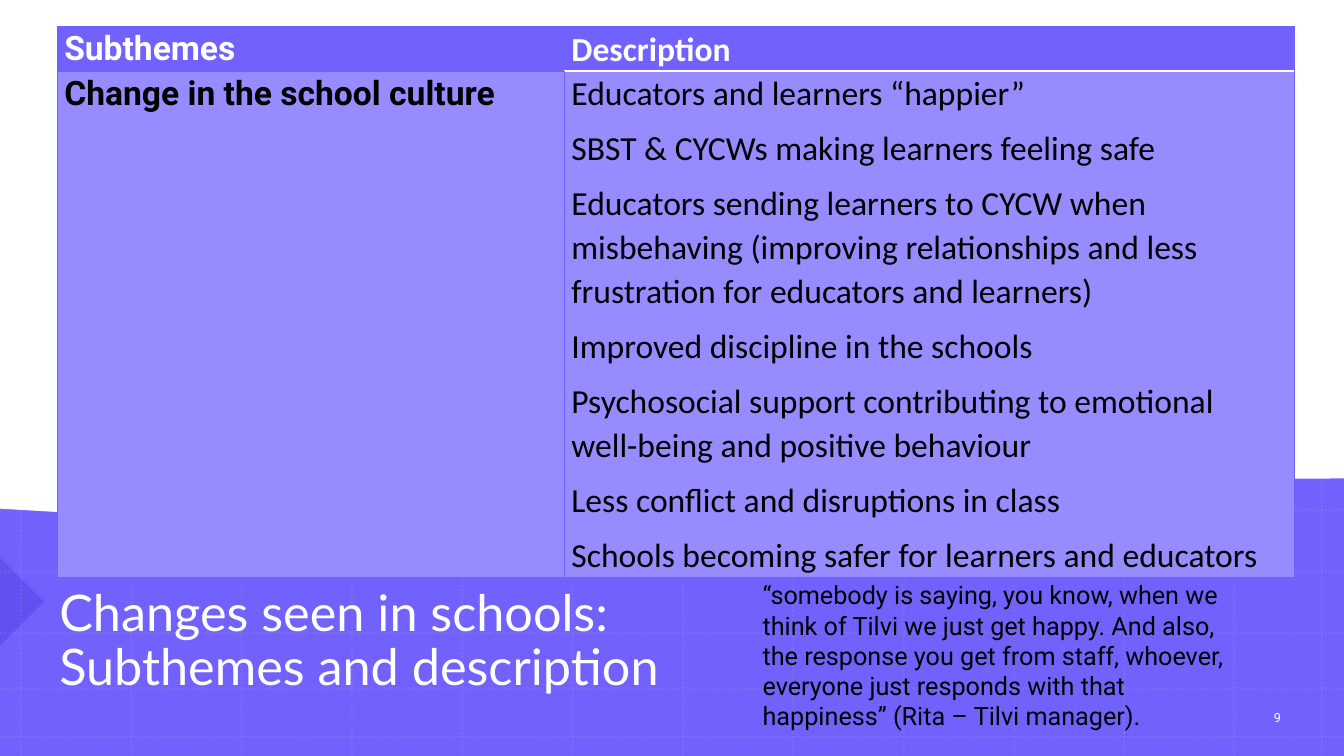
from lxml import etree
from pptx import Presentation
from pptx.dml.color import RGBColor
from pptx.enum.dml import MSO_LINE
from pptx.enum.shapes import MSO_CONNECTOR, MSO_SHAPE
from pptx.enum.text import MSO_ANCHOR, MSO_AUTO_SIZE, PP_ALIGN
from pptx.oxml.ns import qn
from pptx.util import Cm, Pt

VIOLET = RGBColor(0x71, 0x62, 0xFE)
LILAC = RGBColor(0x97, 0x8C, 0xFF)
INDIGO = RGBColor(0x12, 0x01, 0xAF)
MAUVE = RGBColor(0xB4, 0x95, 0xC2)
WHITE = RGBColor(0xFF, 0xFF, 0xFF)
BLACK = RGBColor(0x00, 0x00, 0x00)

WIDTH, HEIGHT = 33.87, 19.05
GRID_COLUMNS = [0.53 + 2.78 * step for step in range(12)] + [33.32]
GRID_ROWS = [12.85, 14.4, 15.95, 17.35, 18.57]
WAVE = [(33.91, 12.04), (17.02, 12.04), (16.92, 13.84), (0, 12.8)]

TITLE = "Changes seen in schools:\vSubthemes and description"
QUOTE = (
    "“somebody is saying, you know, when we think of Tilvi we just get happy. "
    "And also, the response you get from staff, whoever, everyone just responds "
    "with that happiness” (Rita – Tilvi manager)."
)
DESCRIPTIONS = [
    "Educators and learners “happier”",
    "SBST & CYCWs making learners feeling safe",
    "Educators sending learners to CYCW when misbehaving (improving "
    "relationships and less frustration for educators and learners)",
    "Improved discipline in the schools",
    "Psychosocial support contributing to emotional well-being and positive behaviour",
    "Less conflict and disruptions in class",
    "Schools becoming safer for learners and educators",
]


def set_opacity(element, percent):
    """Make the first colour inside the element partly transparent."""
    color = next(element.iter(qn("a:srgbClr")))
    etree.SubElement(color, qn("a:alpha"), val=str(percent * 1000))


def format_text(frame, font, size, color, bold=False):
    for para in frame.paragraphs:
        for span in para.runs:
            span.font.name = font
            span.font.size = Pt(size)
            span.font.bold = bold
            span.font.color.rgb = color


def add_filled_shape(page, kind, left, top, width, height, color):
    shape = page.shapes.add_shape(kind, Cm(left), Cm(top), Cm(width), Cm(height))
    shape.shadow.inherit = False
    shape.fill.solid()
    shape.fill.fore_color.rgb = color
    shape.line.fill.background()
    return shape


def add_grid_line(page, x1, y1, x2, y2):
    connector = page.shapes.add_connector(
        MSO_CONNECTOR.STRAIGHT, Cm(x1), Cm(y1), Cm(x2), Cm(y2)
    )
    connector.line.color.rgb = MAUVE
    connector.line.width = Pt(1.5)
    connector.line.dash_style = MSO_LINE.ROUND_DOT
    properties = connector.element.spPr
    set_opacity(properties, 20)
    etree.SubElement(properties, qn("a:effectLst"))


def curve_points(controls, steps=40):
    """Sample a cubic Bézier curve."""
    points = []
    for step in range(steps + 1):
        t = step / steps
        weights = [(1 - t) ** 3, 3 * t * (1 - t) ** 2, 3 * t**2 * (1 - t), t**3]
        points.append(
            tuple(
                Cm(sum(weight * point[axis] for weight, point in zip(weights, controls)))
                for axis in (0, 1)
            )
        )
    return points


def add_white_wave(page):
    builder = page.shapes.build_freeform(Cm(0), Cm(-0.08))
    builder.add_line_segments([(Cm(33.91), Cm(-0.08))] + curve_points(WAVE))
    wave = builder.convert_to_shape()
    wave.shadow.inherit = False
    wave.fill.solid()
    wave.fill.fore_color.rgb = WHITE
    wave.line.color.rgb = WHITE
    wave.line.width = Pt(1)


def add_background(page):
    add_filled_shape(page, MSO_SHAPE.RECTANGLE, 0, 0, 33.91, HEIGHT, VIOLET)
    arrow = add_filled_shape(
        page, MSO_SHAPE.RIGHT_TRIANGLE, -0.79, 14.38, 1.57, 1.57, INDIGO
    )
    arrow.rotation = 225
    set_opacity(arrow.element.spPr, 17)
    for x in GRID_COLUMNS:
        add_grid_line(page, x, 0, x, HEIGHT)
    for y in GRID_ROWS:
        add_grid_line(page, 0, y, WIDTH, y)
    add_white_wave(page)


def place_title(page):
    title = page.shapes.title
    title.element.getparent().append(title.element)  # in front of the background
    title.left, title.top, title.width, title.height = (
        Cm(1.24), Cm(13.97), Cm(29.85), Cm(4.42)
    )
    frame = title.text_frame
    frame.text = TITLE
    frame.auto_size = MSO_AUTO_SIZE.NONE
    frame.vertical_anchor = MSO_ANCHOR.MIDDLE
    frame.paragraphs[0].alignment = PP_ALIGN.LEFT
    frame.paragraphs[0].line_spacing = 0.9
    format_text(frame, "Lato", 36, WHITE)


def add_text(page, text, left, top, width, height, size, color):
    box = page.shapes.add_textbox(Cm(left), Cm(top), Cm(width), Cm(height))
    frame = box.text_frame
    frame.word_wrap = True
    frame.text = text
    format_text(frame, "Roboto", size, color)
    return box


def add_page_number(page):
    box = add_text(page, "9", 31.09, 17.58, 2.21, 1.02, 9, WHITE)
    box.text_frame.vertical_anchor = MSO_ANCHOR.MIDDLE
    box.text_frame.paragraphs[0].alignment = PP_ALIGN.CENTER
    next(box.element.iter(qn("a:rPr"))).set("spc", "150")


def set_borders(cell, **special):
    """Thin violet borders, except the sides given as (colour, points)."""
    properties = cell._tc.get_or_add_tcPr()
    for index, side in enumerate("LRTB"):
        color, points = special.get(side, (VIOLET, 0.5))
        line = etree.Element(qn(f"a:ln{side}"), w=str(Pt(points)))
        fill = etree.SubElement(line, qn("a:solidFill"))
        etree.SubElement(fill, qn("a:srgbClr"), val=str(color))
        properties.insert(index, line)


def fill_cell(cell, lines, font, color, background, bold=True, **borders):
    cell.margin_left = cell.margin_right = Cm(0.18)
    cell.margin_top = cell.margin_bottom = 0
    cell.fill.solid()
    cell.fill.fore_color.rgb = background
    cell.text_frame.text = "\n".join(lines)
    for para in cell.text_frame.paragraphs:
        para.line_spacing = 1.07
        para.space_after = Pt(8)
    format_text(cell.text_frame, font, 24, color, bold)
    set_borders(cell, **borders)


def add_subtheme_table(page):
    table = page.shapes.add_table(
        2, 2, Cm(1.44), Cm(0.67), Cm(31.17), Cm(13.87)
    ).table
    table.horz_banding = False
    table.columns[0].width, table.columns[1].width = Cm(12.78), Cm(18.39)
    table.rows[0].height, table.rows[1].height = Cm(1.12), Cm(12.75)
    rule = (WHITE, 1)
    divider = (VIOLET, 1)
    fill_cell(table.cell(0, 0), ["Subthemes"], "Roboto", WHITE, VIOLET)
    fill_cell(table.cell(0, 1), ["Description"], "Calibri", WHITE, VIOLET, B=rule)
    fill_cell(table.cell(1, 0), ["Change in the school culture"], "Roboto",
              BLACK, LILAC, R=divider)
    fill_cell(table.cell(1, 1), DESCRIPTIONS, "Calibri", BLACK, LILAC,
              bold=False, L=divider, T=rule)


def main():
    deck = Presentation()
    deck.slide_width, deck.slide_height = Cm(WIDTH), Cm(HEIGHT)
    page = deck.slides.add_slide(deck.slide_layouts.get_by_name("Title Only"))
    add_background(page)
    place_title(page)
    add_page_number(page)
    add_subtheme_table(page)
    add_text(page, QUOTE, 18.97, 14.48, 12.12, 4.11, 18, BLACK)
    deck.save("out.pptx")


if __name__ == "__main__":
    main()
